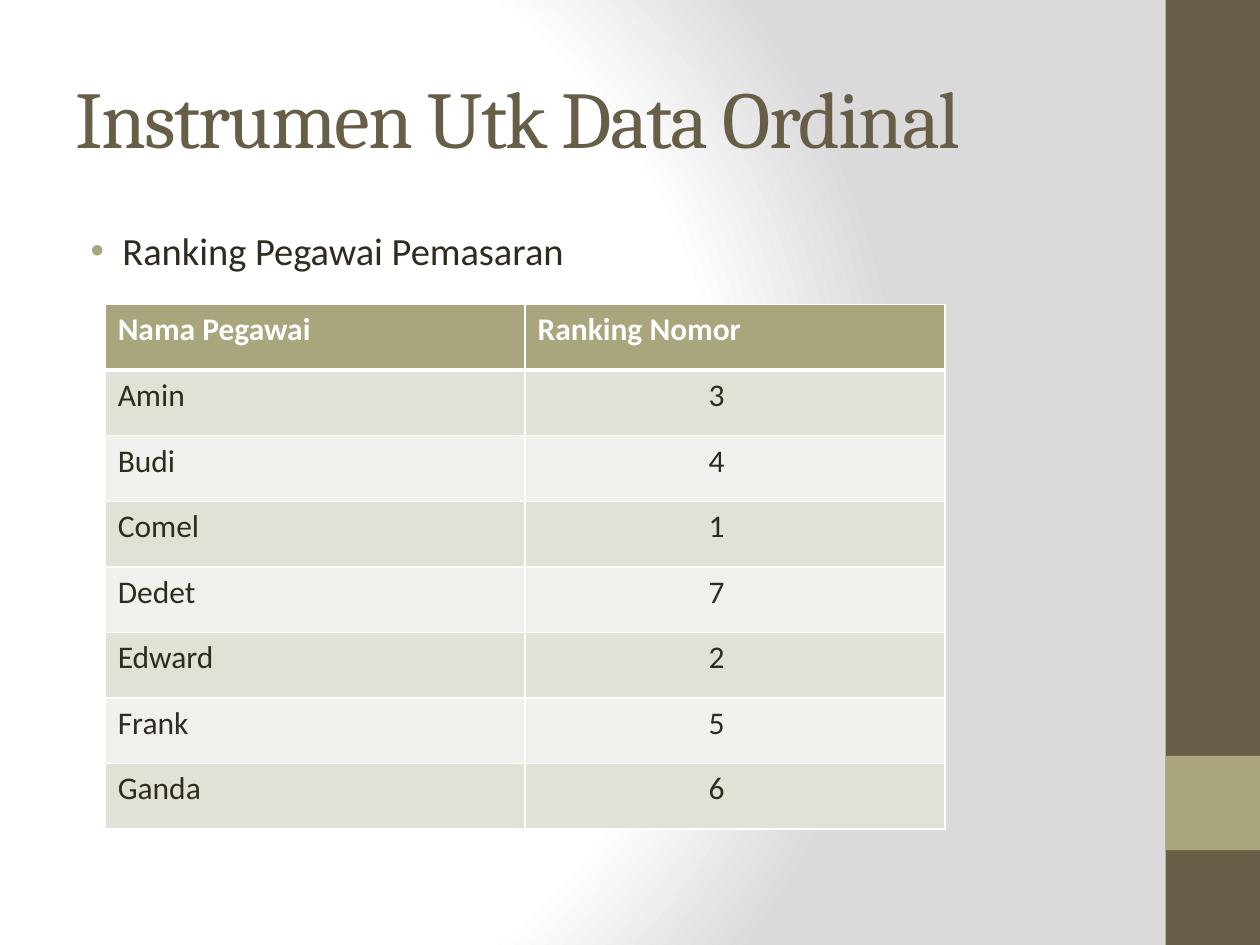
from typing import NamedTuple

from lxml import etree
from pptx import Presentation
from pptx.dml.color import RGBColor
from pptx.enum.shapes import MSO_SHAPE
from pptx.enum.text import MSO_ANCHOR, PP_ALIGN
from pptx.oxml import parse_xml
from pptx.oxml.ns import nsdecls, qn
from pptx.util import Cm, Pt

RECTANGLE = MSO_SHAPE.RECTANGLE
LEFT = PP_ALIGN.LEFT
TOP, MIDDLE = MSO_ANCHOR.TOP, MSO_ANCHOR.MIDDLE

BROWN, OLIVE, INK, WHITE = "675E47", "A9A57C", "2F2B20", "FFFFFF"
BANDS = ("E2E1D7", "F1F0EC")


class Box(NamedTuple):
    """Position and size in centimetres."""
    left: float
    top: float
    width: float
    height: float

    def lengths(self):
        return [Cm(value) for value in self]


class Block(NamedTuple):
    box: Box
    color: str


class Employee(NamedTuple):
    name: str
    rank: int


SIDE_BLOCKS = (
    Block(Box(23.5, 0, 1.9, 19.05), BROWN),
    Block(Box(23.5, 15.24, 1.9, 1.9), OLIVE),
)
TITLE_BOX = Box(1.27, 0.76, 21.17, 3.18)
BODY_BOX = Box(1.27, 4.45, 21.17, 13.34)
TABLE_BOX = Box(2.12, 6.14, 16.93, 10.58)
RANK_INDENT = 3.7
HEADINGS = ("Nama Pegawai", "Ranking Nomor")
EMPLOYEES = (
    Employee("Amin", 3), Employee("Budi", 4), Employee("Comel", 1),
    Employee("Dedet", 7), Employee("Edward", 2), Employee("Frank", 5),
    Employee("Ganda", 6),
)


def rgb(color: str) -> RGBColor:
    return RGBColor.from_string(color)


def write_text(frame, text: str, *, size: float, color: str = INK,
               font: str = "Calibri", bold: bool = False, anchor=TOP):
    frame.word_wrap = True
    frame.vertical_anchor = anchor
    paragraph = frame.paragraphs[0]
    paragraph.alignment = LEFT
    run = paragraph.add_run()
    run.text = text
    run.font.name = font
    run.font.size = Pt(size)
    run.font.bold = bold
    run.font.color.rgb = rgb(color)
    return paragraph


def set_background(slide) -> None:
    """Radial gradient, white up to three quarters and then grey."""
    slide.background.fill.solid()
    properties = slide.element.find(".//" + qn("p:bgPr"))
    stops = "".join(
        f'<a:gs pos="{position * 1000}"><a:srgbClr val="{color}"/></a:gs>'
        for position, color in ((0, WHITE), (75, WHITE), (100, "DADADA")))
    gradient = parse_xml(
        f'<a:gradFill {nsdecls("a")} rotWithShape="1"><a:gsLst>{stops}</a:gsLst>'
        '<a:path path="circle"><a:fillToRect l="20000" t="50000" r="100000" '
        'b="50000"/></a:path></a:gradFill>')
    properties.replace(properties.find(qn("a:solidFill")), gradient)


def add_block(slide, block: Block) -> None:
    shape = slide.shapes.add_shape(RECTANGLE, *block.box.lengths())
    shape.shadow.inherit = False
    shape.fill.solid()
    shape.fill.fore_color.rgb = rgb(block.color)
    shape.line.fill.background()


def add_title(slide, text: str) -> None:
    title = slide.shapes.title
    title.left, title.top, title.width, title.height = TITLE_BOX.lengths()
    paragraph = write_text(title.text_frame, text, size=46, color=BROWN,
                           font="Cambria", anchor=MIDDLE)
    paragraph.runs[0].font._element.set("spc", "-100")


def add_bullet(slide, text: str) -> None:
    text_box = slide.shapes.add_textbox(*BODY_BOX.lengths())
    paragraph = write_text(text_box.text_frame, text, size=22)
    paragraph.space_before = Pt(4.4)
    properties = paragraph._p.get_or_add_pPr()
    properties.set("marL", str(Cm(0.95)))
    properties.set("indent", str(Cm(-0.64)))
    color = etree.SubElement(properties, qn("a:buClr"))
    etree.SubElement(color, qn("a:srgbClr"), val=OLIVE)
    etree.SubElement(properties, qn("a:buFont"), typeface="Arial")
    etree.SubElement(properties, qn("a:buChar"), char="•")


def set_borders(cell, **widths: float) -> None:
    properties = cell._tc.get_or_add_tcPr()
    for side in "LRTB":
        line = etree.SubElement(properties, qn(f"a:ln{side}"),
                                w=str(Pt(widths.get(side, 1))))
        fill = etree.SubElement(line, qn("a:solidFill"))
        etree.SubElement(fill, qn("a:srgbClr"), val=WHITE)


def add_ranking_table(slide) -> None:
    rows = (HEADINGS, *EMPLOYEES)
    frame = slide.shapes.add_table(len(rows), len(HEADINGS), *TABLE_BOX.lengths())
    table = frame.table
    for row_index, row in enumerate(rows):
        is_header = row_index == 0
        # A thick line parts the header from the rows below it
        thick = {0: {"B": 3}, 1: {"T": 3}}.get(row_index, {})
        for column_index, value in enumerate(row):
            cell = table.cell(row_index, column_index)
            set_borders(cell, **thick)
            cell.fill.solid()
            cell.fill.fore_color.rgb = rgb(
                OLIVE if is_header else BANDS[(row_index - 1) % 2])
            write_text(cell.text_frame, str(value), size=18, bold=is_header,
                       color=WHITE if is_header else INK)
            if column_index == 1 and not is_header:
                cell.margin_left = Cm(RANK_INDENT)


def main() -> None:
    presentation = Presentation()
    presentation.slide_width, presentation.slide_height = Cm(25.4), Cm(19.05)
    slide = presentation.slides.add_slide(presentation.slide_layouts[5])

    # Background and side band
    set_background(slide)
    for block in SIDE_BLOCKS:
        add_block(slide, block)

    # Content
    add_title(slide, "Instrumen Utk Data Ordinal")
    add_bullet(slide, "Ranking Pegawai Pemasaran")
    add_ranking_table(slide)
    presentation.save("out.pptx")


if __name__ == "__main__":
    main()
